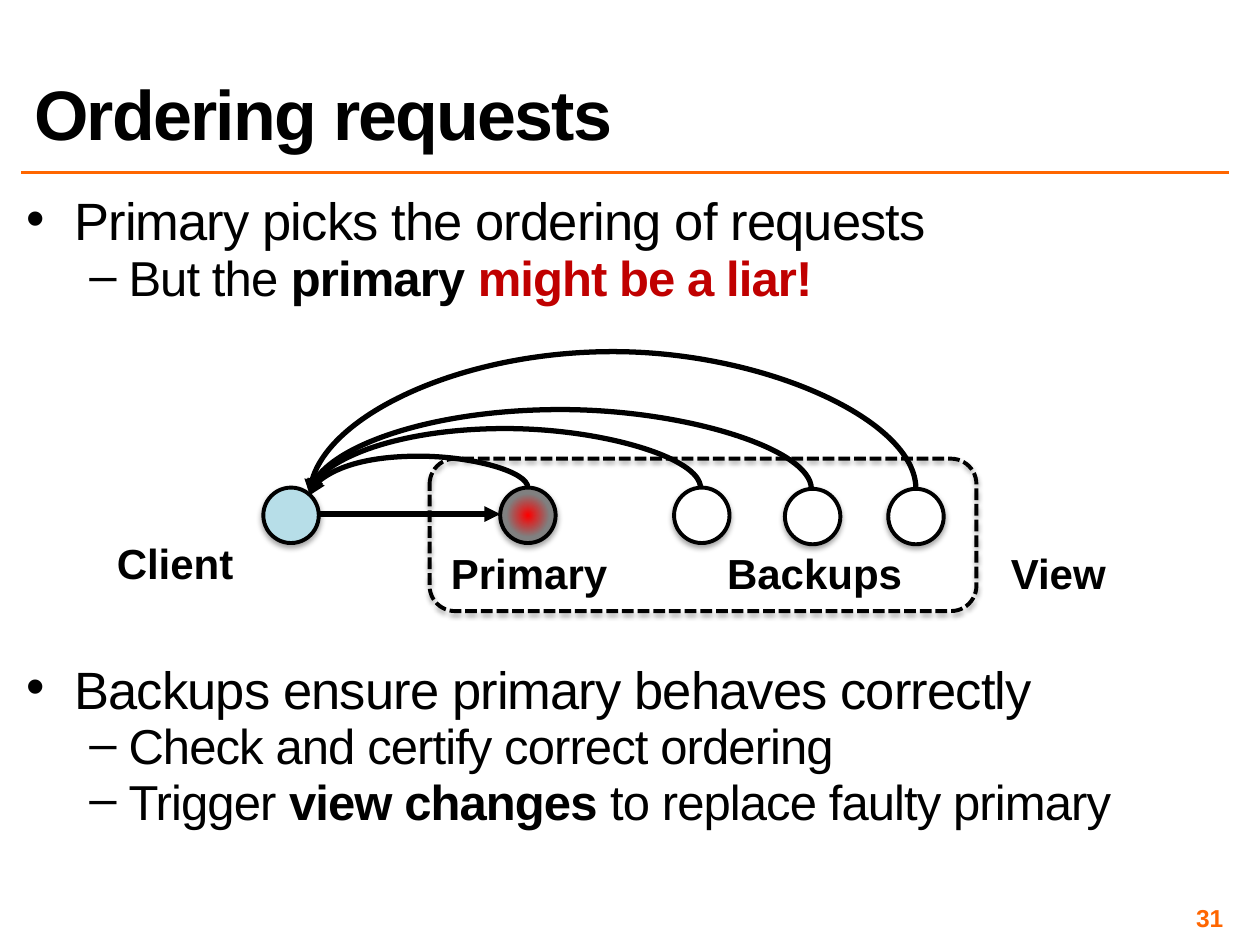
from dataclasses import dataclass

from lxml.etree import SubElement
from pptx import Presentation
from pptx.dml.color import RGBColor
from pptx.enum.dml import MSO_LINE
from pptx.enum.shapes import MSO_CONNECTOR, MSO_SHAPE
from pptx.enum.text import MSO_ANCHOR, MSO_AUTO_SIZE, PP_ALIGN
from pptx.oxml.ns import qn
from pptx.util import Inches, Pt


@dataclass(frozen=True)
class Theme:
    font: str = "Arial"
    black: str = "000000"
    white: str = "FFFFFF"
    orange: str = "FF6600"
    warning: str = "C00000"
    client: str = "B7DEE8"
    faulty: str = "FF0000"
    gray: str = "808080"
    title: int = 40
    bullet: int = 30
    dash: int = 28
    label: int = 24
    number: int = 14
    outline: float = 2.25
    arrow: float = 3


@dataclass(frozen=True)
class Span:
    text: str
    bold: bool = False
    color: str = Theme.black


@dataclass(frozen=True)
class Item:
    level: int
    before: int
    spans: tuple[Span, ...]


@dataclass(frozen=True)
class Node:
    x: float
    y: float
    fill: str


@dataclass(frozen=True)
class Label:
    text: str
    x: float
    y: float
    w: float


@dataclass(frozen=True)
class Reply:
    x: float
    y: float
    peak: float


T = Theme()
NODE = 0.44
REPLY_END = (2.46, 3.93)
ITEMS = (
    Item(0, 14, (Span("Primary picks the ordering of requests"),)),
    Item(1, 8, (Span("But the "), Span("primary ", True), Span("might be a liar!", True, T.warning))),
    Item(0, 211, (Span("Backups ensure primary behaves correctly"),)),
    Item(1, 8, (Span("Check and certify correct ordering"),)),
    Item(1, 8, (Span("Trigger "), Span("view changes ", True), Span("to replace faulty primary"))),
)
NODES = (
    Node(2.09, 3.87, T.client),
    Node(3.97, 3.87, T.gray),
    Node(5.35, 3.87, T.white),
    Node(6.23, 3.88, T.white),
    Node(7.05, 3.88, T.white),
)
REPLIES = (
    Reply(7.27, 3.88, 2.79),
    Reply(5.56, 3.87, 3.4),
    Reply(6.44, 3.88, 3.25),
    Reply(4.19, 3.87, 3.62),
)
LABELS = (
    Label("Client", 0.82, 4.22, 1.14),
    Label("View", 7.92, 4.3, 0.96),
    Label("Primary", 3.47, 4.3, 1.46),
    Label("Backups", 5.66, 4.3, 1.61),
)


def rgb(color: str) -> RGBColor:
    """Turn a hex string into a colour."""
    return RGBColor.from_string(color)


def place(sp, x: float, y: float, w: float, h: float) -> None:
    """Move and size a shape in inches."""
    sp.left, sp.top, sp.width, sp.height = map(Inches, (x, y, w, h))


def style(r, size: int, color: str = T.black, bold: bool = True, spacing: int = 0) -> None:
    """Format one run."""
    r.font.name, r.font.size, r.font.bold = T.font, Pt(size), bold
    r.font.color.rgb = rgb(color)
    if spacing:
        r.font._element.set("spc", str(spacing)) if hasattr(r.font, "_element") else r._r.get_or_add_rPr().set("spc", str(spacing))


def inset(tf) -> None:
    """Give a text frame its narrow margins."""
    tf.margin_left = tf.margin_right = tf.margin_top = tf.margin_bottom = Inches(0.04)


def add_title(s, text: str) -> None:
    """Fill the title placeholder."""
    sp = s.shapes.title
    place(sp, 0.17, 0.1, 9.58, 1.17)
    tf = sp.text_frame
    tf.text = text
    tf.auto_size, tf.vertical_anchor = MSO_AUTO_SIZE.NONE, MSO_ANCHOR.BOTTOM
    p = tf.paragraphs[0]
    p.alignment, p.line_spacing = PP_ALIGN.LEFT, 0.8
    style(p.runs[0], T.title, spacing=-100)


def add_items(s, items: tuple[Item, ...]) -> None:
    """Fill the body placeholder with two levels of bullets."""
    sp = s.placeholders[1]
    place(sp, 0.17, 1.59, 9.58, 5.48)
    tf = sp.text_frame
    tf.auto_size = MSO_AUTO_SIZE.NONE
    inset(tf)
    for i, item in enumerate(items):
        p = tf.add_paragraph() if i else tf.paragraphs[0]
        p.level, p.line_spacing, p.space_before = item.level, 0.7, Pt(item.before)
        margin, indent, mark, size = ((0.38, -0.38, "•", T.bullet), (0.81, -0.31, "–", T.dash))[item.level]
        pPr = p._p.get_or_add_pPr()
        pPr.set("marL", str(Inches(margin)))
        pPr.set("indent", str(Inches(indent)))
        SubElement(pPr, qn("a:buFont"), typeface=T.font)
        SubElement(pPr, qn("a:buChar"), char=mark)
        for span in item.spans:
            r = p.add_run()
            r.text = span.text
            style(r, size, span.color, span.bold, -50)


def add_outlined(s, kind: MSO_SHAPE, x: float, y: float, w: float, h: float):
    """Draw an unfilled black outline with a soft shadow below."""
    sp = s.shapes.add_shape(kind, *map(Inches, (x, y, w, h)))
    sp.fill.background()
    sp.line.color.rgb, sp.line.width = rgb(T.black), Pt(T.outline)
    sp.shadow.inherit = False
    effects = sp._element.spPr.find(qn("a:effectLst"))
    shadow = SubElement(effects, qn("a:outerShdw"), blurRad=str(Pt(3.1)), dist=str(Pt(1.8)), dir="5400000", rotWithShape="0")
    SubElement(SubElement(shadow, qn("a:srgbClr"), val=T.black), qn("a:alpha"), val="35000")
    return sp


def add_node(s, node: Node) -> None:
    """Draw a replica or client; the gray one glows red at its centre."""
    sp = add_outlined(s, MSO_SHAPE.OVAL, node.x, node.y, NODE, NODE)
    if node.fill != T.gray:
        sp.fill.solid()
        sp.fill.fore_color.rgb = rgb(node.fill)
        return
    sp.fill.gradient()
    for stop, color, position in zip(sp.fill.gradient_stops, (T.faulty, T.gray), (0, 0.55)):
        stop.color.rgb, stop.position = rgb(color), position
    grad = sp._element.spPr.find(qn("a:gradFill"))
    grad.remove(grad.find(qn("a:lin")))
    circle = SubElement(grad, qn("a:path"), path="circle")
    SubElement(circle, qn("a:fillToRect"), dict.fromkeys("ltrb", "50000"))


def add_line(s, kind: MSO_CONNECTOR, ends: tuple[float, ...], color: str, width: float, arrow: bool = False):
    """Draw a connector, with an arrowhead at its end if asked."""
    c = s.shapes.add_connector(kind, *map(Inches, ends))
    c.line.color.rgb, c.line.width = rgb(color), Pt(width)
    spPr = c._element.spPr
    if arrow:
        SubElement(spPr.find(qn("a:ln")), qn("a:tailEnd"), type="triangle")
    SubElement(spPr, qn("a:effectLst"))
    return c


def add_reply(s, reply: Reply) -> None:
    """Draw an arc that rises to its peak and falls to the client."""
    end_x, end_y = REPLY_END
    w, h = end_y - reply.y, reply.x - end_x
    x, y = (reply.x + end_x - w) / 2, (reply.y + end_y - h) / 2
    c = add_line(s, MSO_CONNECTOR.CURVE, (x, y, x + w, y + h), T.black, T.arrow, True)
    spPr = c._element.spPr
    for name, value in (("rot", "16200000"), ("flipH", "1"), ("flipV", "1")):
        spPr.find(qn("a:xfrm")).set(name, value)
    bend = round((reply.peak - reply.y) / w * 100000)
    guides = spPr.find(qn("a:prstGeom")).find(qn("a:avLst"))
    SubElement(guides, qn("a:gd"), name="adj1", fmla=f"val {bend}")


def add_label(s, label: Label) -> None:
    """Write a bold centred caption."""
    tf = s.shapes.add_textbox(*map(Inches, (label.x, label.y, label.w, 0.5))).text_frame
    tf.text = label.text
    tf.word_wrap, tf.auto_size = False, MSO_AUTO_SIZE.SHAPE_TO_FIT_TEXT
    tf.paragraphs[0].alignment = PP_ALIGN.CENTER
    style(tf.paragraphs[0].runs[0], T.label)


def add_number(s, text: str) -> None:
    """Write the slide number at the lower right."""
    tf = s.shapes.add_textbox(*map(Inches, (7.42, 7.17, 2.33, 0.23))).text_frame
    tf.text = text
    tf.word_wrap, tf.vertical_anchor = True, MSO_ANCHOR.MIDDLE
    inset(tf)
    tf.paragraphs[0].alignment = PP_ALIGN.RIGHT
    style(tf.paragraphs[0].runs[0], T.number, T.orange)


def main() -> None:
    """Build the slide and save it."""
    prs = Presentation()
    prs.slide_width, prs.slide_height = Inches(10), Inches(7.5)
    s = prs.slides.add_slide(prs.slide_layouts[1])
    add_line(s, MSO_CONNECTOR.STRAIGHT, (0.17, 1.37, 9.75, 1.37), T.orange, 2)
    add_items(s, ITEMS)
    add_number(s, "31")
    add_title(s, "Ordering requests")
    for node in NODES:
        add_node(s, node)
    view = add_outlined(s, MSO_SHAPE.ROUNDED_RECTANGLE, 3.41, 3.64, 4.34, 1.21)
    view.line.dash_style = MSO_LINE.SQUARE_DOT
    for reply in REPLIES:
        add_reply(s, reply)
    add_line(s, MSO_CONNECTOR.STRAIGHT, (2.53, 4.08, 3.97, 4.08), T.black, T.arrow, True)
    for label in LABELS:
        add_label(s, label)
    prs.save("out.pptx")


if __name__ == "__main__":
    main()
